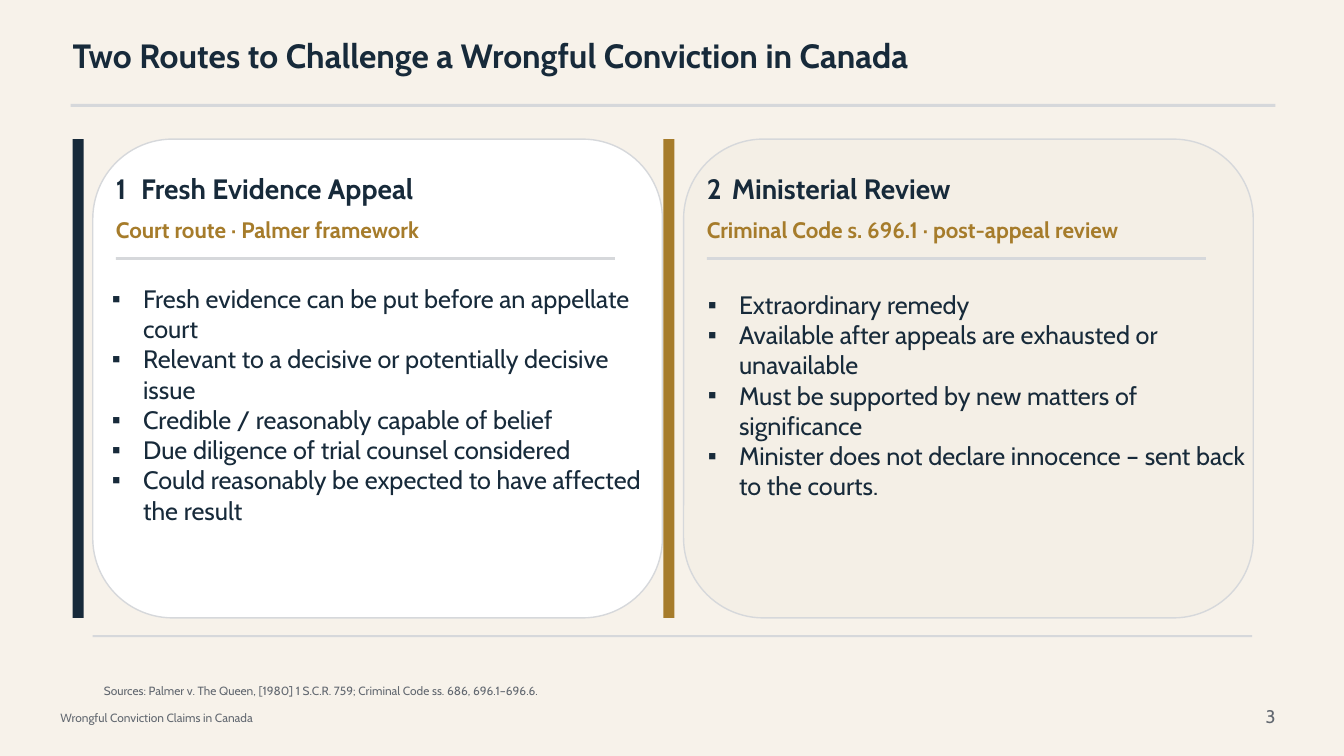
from lxml.etree import SubElement
from pptx import Presentation
from pptx.dml.color import RGBColor
from pptx.enum.shapes import MSO_SHAPE as Preset
from pptx.enum.text import MSO_ANCHOR as Anchor, MSO_AUTO_SIZE as AutoSize, PP_ALIGN as Align
from pptx.oxml.ns import qn
from pptx.util import Inches, Pt

# Palette
NAVY = RGBColor(0x17, 0x2A, 0x3A)
GOLD = RGBColor(0xA6, 0x7C, 0x2B)
GREY = RGBColor(0x62, 0x68, 0x70)
RULE = RGBColor(0xD6, 0xD8, 0xDB)
CREAM = RGBColor(0xF7, 0xF2, 0xEA)
SAND = RGBColor(0xF4, 0xEF, 0xE6)
WHITE = RGBColor(0xFF, 0xFF, 0xFF)

# Two-column grid, in inches
FIRST_CARD, CARD_PITCH = 0.92, 5.86
CARD_TOP, CARD_WIDTH, CARD_HEIGHT = 1.38, 5.65, 4.75
BAR_OFFSET, BAR_WIDTH = -0.2, 0.11
TEXT_INSET = 0.23

# Text formats
TITLE = {"size": Pt(24), "bold": True, "color": NAVY}
HEADING = {"size": Pt(20), "bold": True, "color": NAVY}
SUBHEADING = {"size": Pt(16), "bold": True, "color": GOLD}
BULLET = {"size": Pt(18), "bold": False, "color": NAVY}
FOOTNOTE = {"size": Pt(8.5), "bold": False, "color": GREY}
PAGE = {"size": Pt(13), "bold": False, "color": GREY}

# Colours, texts and list box (left offset, top, width, height) of each route
ROUTES = [
    {
        "fill": WHITE, "bar": NAVY, "list_box": (0.19, 2.81, 5.32, 2.73),
        "heading": "1\tFresh Evidence Appeal",
        "subheading": "Court route · Palmer framework",
        "points": [
            "Fresh evidence can be put before an appellate court",
            "Relevant to a decisive or potentially decisive issue",
            "Credible / reasonably capable of belief",
            "Due diligence of trial counsel considered",
            "Could reasonably be expected to have affected the result",
        ],
    },
    {
        "fill": SAND, "bar": GOLD, "list_box": (0.24, 2.87, 5.41, 2.42),
        "heading": "2\tMinisterial Review",
        "subheading": "Criminal Code s. 696.1 · post-appeal review",
        "points": [
            "Extraordinary remedy",
            "Available after appeals are exhausted or unavailable",
            "Must be supported by new matters of significance",
            "Minister does not declare innocence – sent back to the courts.",
        ],
    },
]


def set_attributes(target, values):
    for name, value in values.items():
        setattr(target, name, value)


def add_block(slide, preset, box, fill, line=None):
    shape = slide.shapes.add_shape(preset, *map(Inches, box))
    shape.shadow.inherit = False
    shape.fill.solid()
    shape.fill.fore_color.rgb = fill
    if line is None:
        shape.line.fill.background()
    else:
        shape.line.color.rgb = line
        shape.line.width = Pt(1)


def add_bullet(paragraph):
    properties = paragraph._p.get_or_add_pPr()
    properties.set("marL", str(Inches(0.31)))
    properties.set("indent", str(-Inches(0.31)))
    SubElement(properties, qn("a:buChar"), char="▪")


def add_tab_stop(paragraph, position):
    stops = SubElement(paragraph._p.get_or_add_pPr(), qn("a:tabLst"))
    SubElement(stops, qn("a:tab"), pos=str(Inches(position)), algn="l")


def write_text(shape, box, lines, text_format, align=Align.LEFT, bulleted=False):
    set_attributes(shape, dict(zip(("left", "top", "width", "height"), map(Inches, box))))
    frame = shape.text_frame
    set_attributes(frame, {
        "margin_left": 0, "margin_top": 0, "margin_right": 0, "margin_bottom": 0,
        "word_wrap": True, "auto_size": AutoSize.NONE, "vertical_anchor": Anchor.TOP,
    })
    for index, line in enumerate(lines):
        paragraph = frame.add_paragraph() if index else frame.paragraphs[0]
        if bulleted:
            add_bullet(paragraph)
        if "\t" in line:
            add_tab_stop(paragraph, 0.25)
        set_attributes(paragraph, {"alignment": align, "space_before": Pt(0)})
        run = paragraph.add_run()
        run.text = line
        set_attributes(run.font, {"name": "Cabin", "size": text_format["size"],
                                  "bold": text_format["bold"]})
        run.font.color.rgb = text_format["color"]


def add_label(slide, box, text, text_format, align=Align.LEFT):
    label = slide.shapes.add_textbox(*map(Inches, box))
    write_text(label, box, [text], text_format, align)


def add_route(slide, route, card_left, body):
    # Card and side bar
    add_block(slide, Preset.ROUNDED_RECTANGLE,
              (card_left, CARD_TOP, CARD_WIDTH, CARD_HEIGHT), route["fill"], RULE)
    add_block(slide, Preset.RECTANGLE,
              (card_left + BAR_OFFSET, CARD_TOP, BAR_WIDTH, CARD_HEIGHT), route["bar"])

    # Headings and divider
    text_left = card_left + TEXT_INSET
    add_label(slide, (text_left, 1.7, 5.05, 0.42), route["heading"], HEADING)
    add_label(slide, (text_left, 2.14, 5.05, 0.36), route["subheading"], SUBHEADING)
    add_block(slide, Preset.RECTANGLE, (text_left, 2.55, 4.95, 0.03), RULE)

    # List, raised above its card
    offset, *rest = route["list_box"]
    write_text(body, (card_left + offset, *rest), route["points"], BULLET, bulleted=True)
    slide.shapes._spTree.append(body._element)


def main():
    presentation = Presentation()
    presentation.slide_width, presentation.slide_height = Inches(13.33), Inches(7.5)
    slide = presentation.slides.add_slide(presentation.slide_layouts[3])
    slide.background.fill.solid()
    slide.background.fill.fore_color.rgb = CREAM

    # Title and its rule
    write_text(slide.shapes.title, (0.72, 0.35, 11.9, 0.55),
               ["Two Routes to Challenge a Wrongful Conviction in Canada"], TITLE)
    add_block(slide, Preset.RECTANGLE, (0.7, 1.03, 11.95, 0.03), RULE)

    # The two routes
    bodies = [slide.placeholders[1], slide.placeholders[2]]
    for column, (route, body) in enumerate(zip(ROUTES, bodies)):
        add_route(slide, route, FIRST_CARD + column * CARD_PITCH, body)

    # Footer
    add_block(slide, Preset.RECTANGLE, (FIRST_CARD, 6.3, 11.5, 0.02), RULE)
    add_label(slide, (1.03, 6.78, 10.8, 0.18),
              "Sources: Palmer v. The Queen, [1980] 1 S.C.R. 759; Criminal Code ss. 686, 696.1–696.6.",
              FOOTNOTE)
    add_label(slide, (0.6, 7.05, 4.8, 0.2), "Wrongful Conviction Claims in Canada", FOOTNOTE)
    add_label(slide, (12.2, 7, 0.45, 0.25), "3", PAGE, Align.RIGHT)

    presentation.save("out.pptx")


if __name__ == "__main__":
    main()
